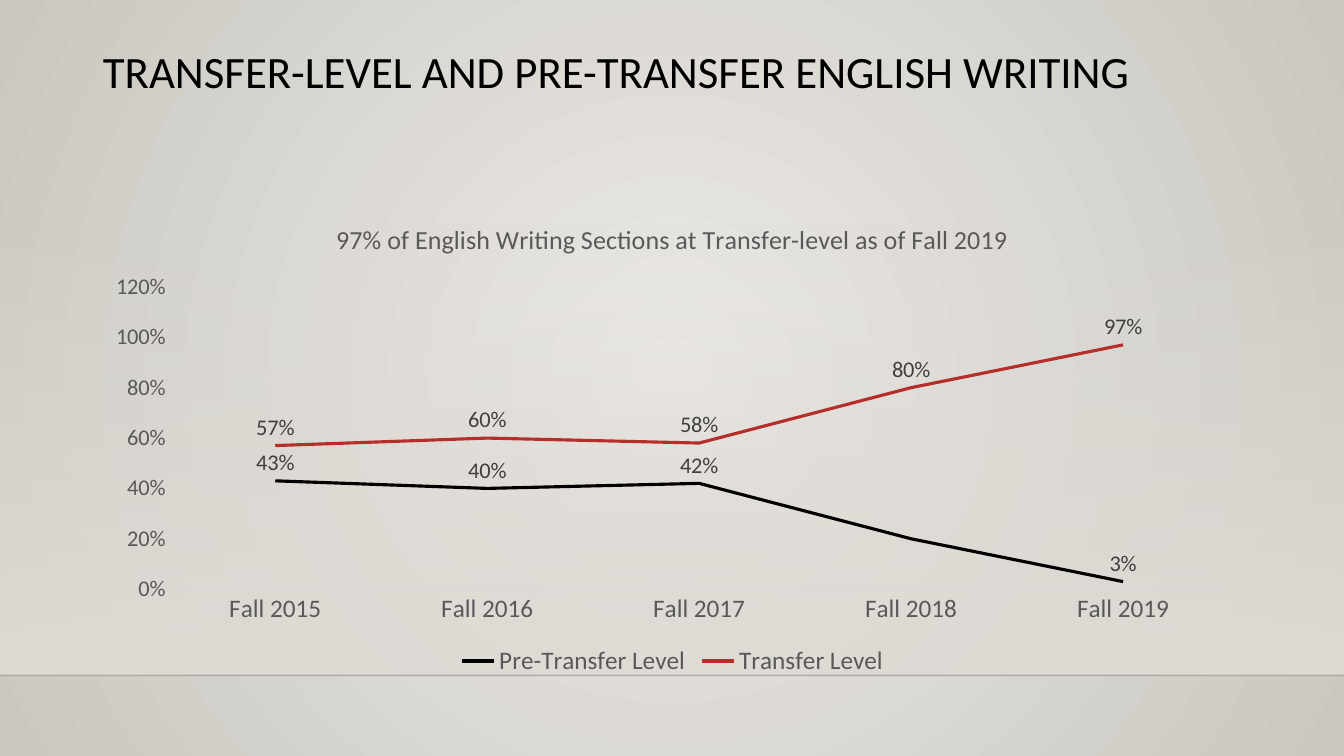
from lxml import etree
from pptx import Presentation
from pptx.chart.data import CategoryChartData
from pptx.dml.color import RGBColor
from pptx.enum.chart import XL_CHART_TYPE, XL_LABEL_POSITION, XL_LEGEND_POSITION, XL_TICK_MARK
from pptx.enum.shapes import MSO_CONNECTOR, MSO_SHAPE
from pptx.enum.text import MSO_ANCHOR, PP_ALIGN
from pptx.oxml import parse_xml
from pptx.oxml.ns import nsdecls, qn
from pptx.util import Inches, Pt

COLORS = {
    "black": "000000", "red": "B52E29", "label": "404040", "axis": "595959",
    "rule": "D9D9D9", "light": "ECEAE7", "dark": "CAC7C1", "floor": "DFDBD5",
}


def set_gradient(parent, stops, direction):
    gs = "".join(
        f'<a:gs pos="{pos * 1000}"><a:srgbClr val="{COLORS[name]}">'
        f'<a:alpha val="{alpha * 1000}"/></a:srgbClr></a:gs>'
        for pos, name, alpha in stops)
    grad = parse_xml(f'<a:gradFill {nsdecls("a")} rotWithShape="1">'
                     f'<a:gsLst>{gs}</a:gsLst>{direction}</a:gradFill>')
    parent.replace(parent.find(qn("a:solidFill")), grad)


def set_font(font, size, color):
    font.name = "Calibri"
    font.size = Pt(size)
    font.bold = False
    font.color.rgb = RGBColor.from_string(COLORS[color])


prs = Presentation()
prs.slide_width, prs.slide_height = Inches(13.33), Inches(7.5)
W = prs.slide_width
left, width = Inches(0.92), Inches(11.5)
floor_top, floor_line = Inches(2.21), Inches(6.7)
s = prs.slides.add_slide(prs.slide_layouts[5])

s.background.fill.solid()
set_gradient(s.element.find(".//" + qn("p:bgPr")),
             [(0, "light", 100), (100, "dark", 100)],
             '<a:path path="circle"><a:fillToRect l="50000" t="50000" r="50000" b="50000"/></a:path>')

sp = s.shapes.add_shape(MSO_SHAPE.RECTANGLE, 0, floor_top, W, floor_line - floor_top)
sp.shadow.inherit = False
sp.line.fill.background()
sp.fill.solid()
set_gradient(sp.element.spPr, [(0, "floor", 0), (100, "floor", 100)],
             '<a:lin ang="5400000" scaled="0"/>')

line = s.shapes.add_connector(MSO_CONNECTOR.STRAIGHT, 0, floor_line, W, floor_line)
line.line.width = Pt(1)
line.line.color.rgb = RGBColor.from_string(COLORS["black"])
line_color = line.element.spPr.find(".//" + qn("a:srgbClr"))
etree.SubElement(line_color, qn("a:alpha")).set("val", "20000")
etree.SubElement(line.element.spPr, qn("a:effectLst"))

title = s.shapes.title
title.left, title.top, title.width, title.height = left, Inches(0.44), width, Inches(1.45)
tf = title.text_frame
tf.text = "TRANSFER-LEVEL AND PRE-TRANSFER ENGLISH WRITING"
tf.word_wrap = True
tf.vertical_anchor = MSO_ANCHOR.TOP
p = tf.paragraphs[0]
p.alignment = PP_ALIGN.LEFT
p.line_spacing = 0.9
set_font(p.runs[0].font, 32, "black")

data = CategoryChartData(number_format="0%")
data.categories = [f"Fall {year}" for year in range(2015, 2020)]
data.add_series("Pre-Transfer Level", (0.43, 0.4, 0.42, 0.2, 0.03))
data.add_series("Transfer Level", (0.57, 0.6, 0.58, 0.8, 0.97))
chart = s.shapes.add_chart(XL_CHART_TYPE.LINE, left, Inches(2), width, Inches(4.76), data).chart
set_font(chart.font, 10, "black")

chart.has_title = True
tf = chart.chart_title.text_frame
tf.text = "97% of English Writing Sections at Transfer-level as of Fall 2019"
set_font(tf.paragraphs[0].runs[0].font, 18.6, "axis")
chart.chart_title.include_in_layout = False

chart.has_legend = True
chart.legend.position = XL_LEGEND_POSITION.BOTTOM
chart.legend.include_in_layout = False
set_font(chart.legend.font, 18, "axis")

for axis, size in ((chart.category_axis, 18), (chart.value_axis, 16)):
    axis.has_major_gridlines = False
    axis.major_tick_mark = axis.minor_tick_mark = XL_TICK_MARK.NONE
    set_font(axis.tick_labels.font, size, "axis")
chart.category_axis.format.line.color.rgb = RGBColor.from_string(COLORS["rule"])
chart.category_axis.format.line.width = Pt(0.75)
value_axis = chart.value_axis
value_axis.format.line.fill.background()
value_axis.minimum_scale, value_axis.maximum_scale, value_axis.major_unit = 0, 1.2, 0.2
value_axis.tick_labels.number_format = "0%"
value_axis.tick_labels.number_format_is_linked = False

plot = chart.plots[0]
plot.vary_by_categories = False
for series, color in zip(plot.series, ("black", "red")):
    series.smooth = False
    series.format.line.width = Pt(2.25)
    series.format.line.color.rgb = RGBColor.from_string(COLORS[color])
    labels = series.data_labels
    labels.show_value = True
    labels.position = XL_LABEL_POSITION.ABOVE
    labels.number_format = "0%"
    labels.number_format_is_linked = False
    set_font(labels.font, 16, "label")

pre_labels = plot.series[0].data_labels._element
pre_labels.insert(0, parse_xml(
    f'<c:dLbl {nsdecls("c")}><c:idx val="3"/><c:delete val="1"/></c:dLbl>'))

plot_area = chart._chartSpace.chart.plotArea
for old in plot_area.findall(qn("c:layout")):
    plot_area.remove(old)
shares = "".join(f'<c:{tag} val="{val}"/>' for tag, val in (
    ("layoutTarget", "inner"), ("xMode", "edge"), ("yMode", "edge"),
    ("x", 0.066), ("y", 0.178), ("w", 0.914), ("h", 0.63)))
plot_area.insert(0, parse_xml(
    f'<c:layout {nsdecls("c")}><c:manualLayout>{shares}</c:manualLayout></c:layout>'))

prs.save("out.pptx")
